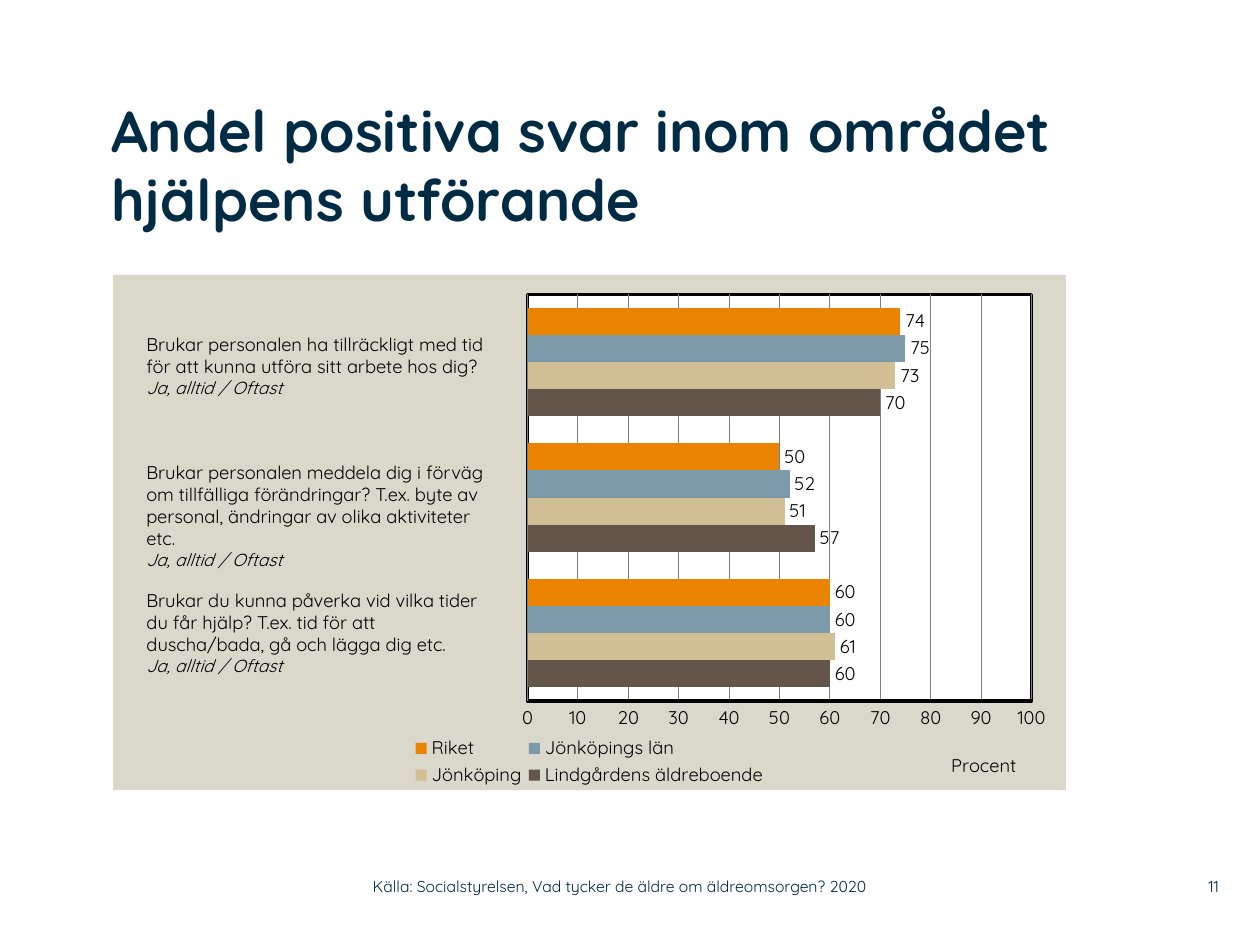
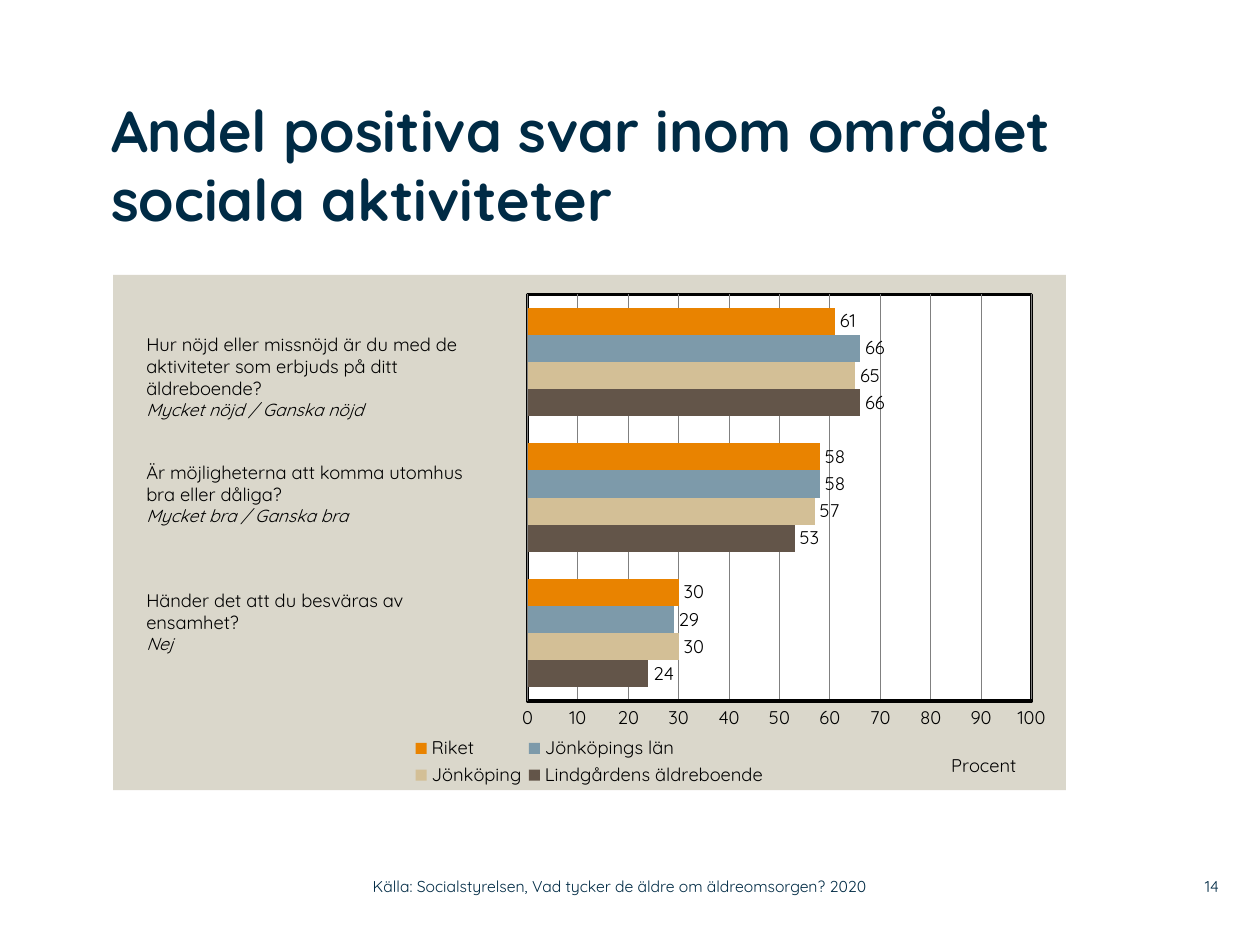
from lxml import etree
from pptx import Presentation
from pptx.chart.data import CategoryChartData
from pptx.dml.color import RGBColor
from pptx.enum.chart import XL_CHART_TYPE, XL_LABEL_POSITION, XL_LEGEND_POSITION, XL_TICK_MARK
from pptx.enum.text import MSO_ANCHOR, MSO_AUTO_SIZE, PP_ALIGN
from pptx.oxml.ns import qn
from pptx.util import Pt

BAR_CLUSTERED = XL_CHART_TYPE.BAR_CLUSTERED
LABEL_OUTSIDE = XL_LABEL_POSITION.OUTSIDE_END
LEGEND_BOTTOM = XL_LEGEND_POSITION.BOTTOM
NO_TICKS = XL_TICK_MARK.NONE
TOP, MIDDLE = MSO_ANCHOR.TOP, MSO_ANCHOR.MIDDLE
GROW = MSO_AUTO_SIZE.SHAPE_TO_FIT_TEXT
LEFT, RIGHT = PP_ALIGN.LEFT, PP_ALIGN.RIGHT

FONT = "Quicksand"
NAVY, BLACK, WHITE, SAND, GRID_GREY = "002B45", "000000", "FFFFFF", "DAD7CB", "808080"
SOURCE = "Källa: Socialstyrelsen, Vad tycker de äldre om äldreomsorgen? 2020"
AXIS_TITLE = "Procent"
GROUP_COLORS = {
    "Lindgårdens äldreboende": "635549",
    "Jönköping": "D3BF96",
    "Jönköpings län": "7D9AAA",
    "Riket": "E98300",
}

# Questions run from the top down: paragraphs, positive answer, lines shown.
# Values follow GROUP_COLORS, each from the bottom question up.
SLIDES = [
    {
        "number": "11",
        "title": "Andel positiva svar inom området hjälpens utförande",
        "questions": [
            (["Brukar personalen ha tillräckligt med tid",
              "för att kunna utföra sitt arbete hos dig?"],
             "Ja, alltid / Oftast", 3),
            (["Brukar personalen meddela dig i förväg om tillfälliga förändringar? "
              "T.ex. byte av personal, ändringar av olika aktiviteter etc."],
             "Ja, alltid / Oftast", 5),
            (["Brukar du kunna påverka vid vilka tider",
              "du får hjälp? T.ex. tid för att",
              "duscha/bada, gå och lägga dig etc."],
             "Ja, alltid / Oftast", 4),
        ],
        "values": [(60, 57, 70), (61, 51, 73), (60, 52, 75), (60, 50, 74)],
    },
    {
        "number": "14",
        "title": "Andel positiva svar inom området sociala aktiviteter",
        "questions": [
            (["Hur nöjd eller missnöjd är du med de aktiviteter som erbjuds "
              "på ditt äldreboende?"],
             "Mycket nöjd / Ganska nöjd", 4),
            (["Är möjligheterna att komma utomhus", "bra eller dåliga?"],
             "Mycket bra / Ganska bra", 3),
            (["Händer det att du besväras av", "ensamhet?"], "Nej", 3),
        ],
        "values": [(24, 53, 66), (30, 57, 65), (29, 58, 66), (30, 58, 61)],
    },
]

TITLE_BOX = (63.5, 54, 547, 102)
SOURCE_BOX = (213, 496, 319, 21)
NUMBER_BOX = (662.5, 496, 34, 21)
CHART_BOX = (64.6, 157, 544.5, 294.5)
QUESTION_LEFT, QUESTION_TOP, QUESTION_WIDTH, QUESTION_STEP = 76.5, 187, 214.5, 73
LINE_HEIGHT, BOX_MARGINS = 12.6, 7.2
PLOT_LAYOUT = {"x": 0.435, "y": 0.038, "w": 0.529, "h": 0.789}
LEGEND_LAYOUT = {"x": 0.31, "y": 0.89, "w": 0.38, "h": 0.11}
AXIS_TITLE_LAYOUT = {"x": 0.876, "y": 0.92}


def rgb(color):
    return RGBColor.from_string(color)


def style_font(font, size, color=BLACK, bold=False, italic=False):
    font.name, font.size = FONT, Pt(size)
    font.bold, font.italic = bold, italic
    font.color.rgb = rgb(color)


def add_text(slide, box, paragraphs, size, color, anchor=TOP, align=LEFT, bold=False, margins=True):
    frame = slide.shapes.add_textbox(*map(Pt, box)).text_frame
    frame.word_wrap = True
    frame.vertical_anchor = anchor
    if not margins:
        frame.margin_left = frame.margin_top = frame.margin_right = frame.margin_bottom = 0
    frame.text = "\n".join(paragraphs)
    for paragraph in frame.paragraphs:
        paragraph.alignment = align
        style_font(paragraph.runs[0].font, size, color, bold)
    return frame


def add_xml(parent, tag, **attributes):
    return etree.SubElement(parent, qn(tag), attributes)


def set_layout(element, fractions, before, inner=False):
    """Place a chart part by fractions of the chart, ahead of the first tag in before."""
    for old in element.findall(qn("c:layout")):
        element.remove(old)
    layout = etree.Element(qn("c:layout"))
    manual = add_xml(layout, "c:manualLayout")
    if inner:
        add_xml(manual, "c:layoutTarget", val="inner")
    for key in ("x", "y"):
        add_xml(manual, f"c:{key}Mode", val="edge")
    for key, fraction in fractions.items():
        add_xml(manual, f"c:{key}", val=str(fraction))
    following = next(child for child in element if child.tag in map(qn, before))
    following.addprevious(layout)


def add_area_format(element, fill, line=None, width=0):
    """Build the fill and outline of a chart area or plot area."""
    properties = etree.Element(qn("c:spPr"))
    solid = add_xml(properties, "a:solidFill")
    add_xml(solid, "a:srgbClr", val=fill)
    outline = add_xml(properties, "a:ln", w=str(Pt(width)))
    if line:
        add_xml(add_xml(outline, "a:solidFill"), "a:srgbClr", val=line)
    else:
        add_xml(outline, "a:noFill")
    element.append(properties)
    return properties


def add_answer_chart(slide, values):
    data = CategoryChartData()
    data.categories = ["1", "2", "3"]
    for name, shares in zip(GROUP_COLORS, values):
        data.add_series(name, shares)
    chart = slide.shapes.add_chart(BAR_CLUSTERED, *map(Pt, CHART_BOX), data).chart
    chart.has_title = False
    style_font(chart.font, 10.5)

    plot = chart.plots[0]
    plot.gap_width, plot.overlap, plot.vary_by_categories = 100, 0, False
    for series, color in zip(plot.series, GROUP_COLORS.values()):
        series.format.fill.solid()
        series.format.fill.fore_color.rgb = rgb(color)
        labels = series.data_labels
        labels.show_value = True
        labels.position = LABEL_OUTSIDE
        style_font(labels.font, 10.5)

    chart.category_axis.visible = False
    axis = chart.value_axis
    axis.minimum_scale, axis.maximum_scale, axis.major_unit = 0, 100, 10
    axis.major_tick_mark = axis.minor_tick_mark = NO_TICKS
    axis.format.line.color.rgb = rgb(BLACK)
    axis.format.line.width = Pt(2)
    axis.major_gridlines.format.line.color.rgb = rgb(GRID_GREY)
    axis.major_gridlines.format.line.width = Pt(0.5)
    style_font(axis.tick_labels.font, 10.5)
    axis_title = axis.axis_title
    axis_title.text_frame.text = AXIS_TITLE
    style_font(axis_title.text_frame.paragraphs[0].runs[0].font, 10.5)

    chart.has_legend = True
    legend = chart.legend
    legend.position, legend.include_in_layout = LEGEND_BOTTOM, False
    style_font(legend.font, 10.5)

    chart_space = chart.element
    plot_area = chart_space.find(".//" + qn("c:plotArea"))
    set_layout(plot_area, PLOT_LAYOUT, ["c:barChart"], inner=True)
    set_layout(chart_space.find(".//" + qn("c:legend")), LEGEND_LAYOUT, ["c:overlay"])
    title_element = chart_space.find(".//" + qn("c:valAx") + "/" + qn("c:title"))
    if title_element.find(qn("c:overlay")) is None:
        title_element.find(qn("c:tx")).addnext(etree.Element(qn("c:overlay"), val="0"))
    set_layout(title_element, AXIS_TITLE_LAYOUT, ["c:overlay"])
    add_area_format(plot_area, WHITE, BLACK, 2)
    chart_space.find(qn("c:txPr")).addprevious(add_area_format(chart_space, SAND))


def add_questions(slide, questions):
    for row, (question, answer, line_count) in enumerate(questions):
        box = (QUESTION_LEFT, QUESTION_TOP + row * QUESTION_STEP,
               QUESTION_WIDTH, BOX_MARGINS + line_count * LINE_HEIGHT)
        frame = add_text(slide, box, question + [answer], 10.5, BLACK)
        frame.auto_size = GROW
        style_font(frame.paragraphs[-1].runs[0].font, 10, italic=True)


def main():
    deck = Presentation()
    deck.slide_width, deck.slide_height = Pt(720), Pt(540)
    for content in SLIDES:
        slide = deck.slides.add_slide(deck.slide_layouts[6])
        add_text(slide, NUMBER_BOX, [content["number"]], 9, NAVY, MIDDLE, RIGHT, margins=False)
        add_text(slide, SOURCE_BOX, [SOURCE], 9, NAVY, MIDDLE, margins=False)
        add_answer_chart(slide, content["values"])
        add_questions(slide, content["questions"])
        add_text(slide, TITLE_BOX, [content["title"]], 33, NAVY, bold=True, margins=False)
    deck.save("out.pptx")


if __name__ == "__main__":
    main()
